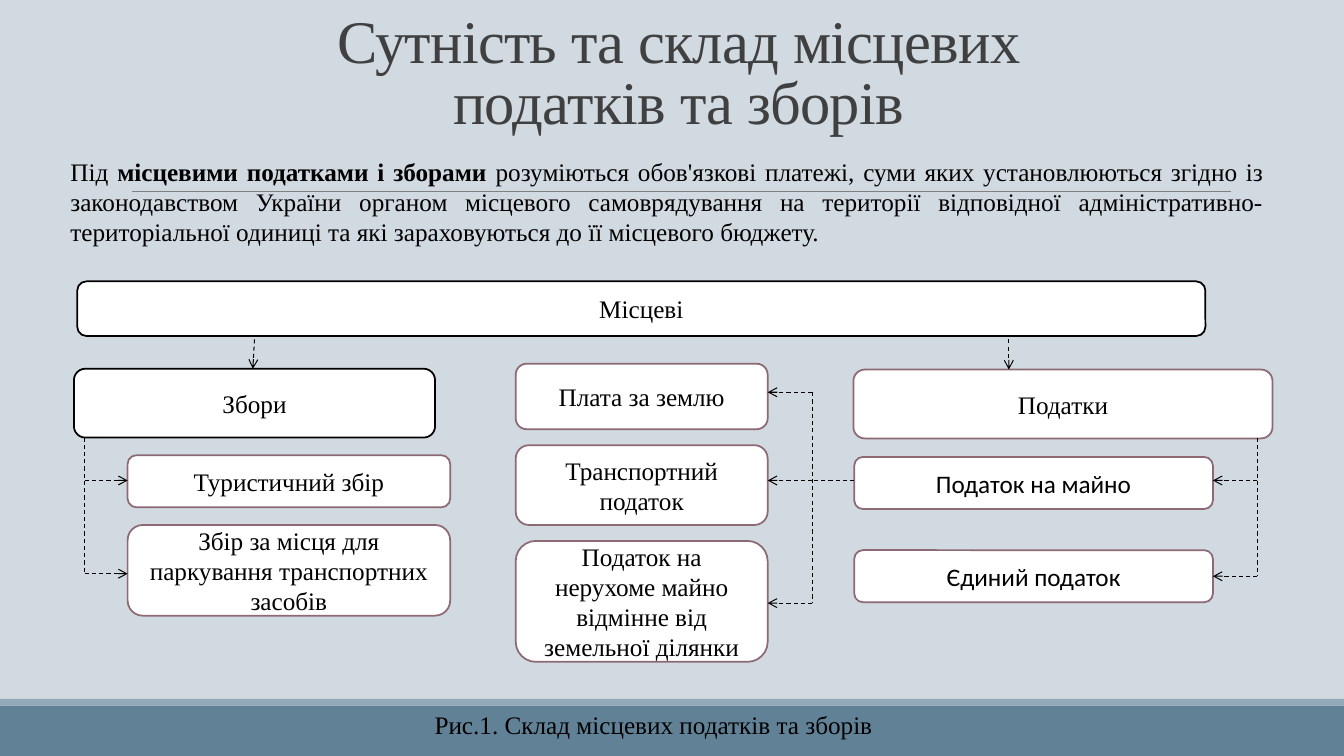
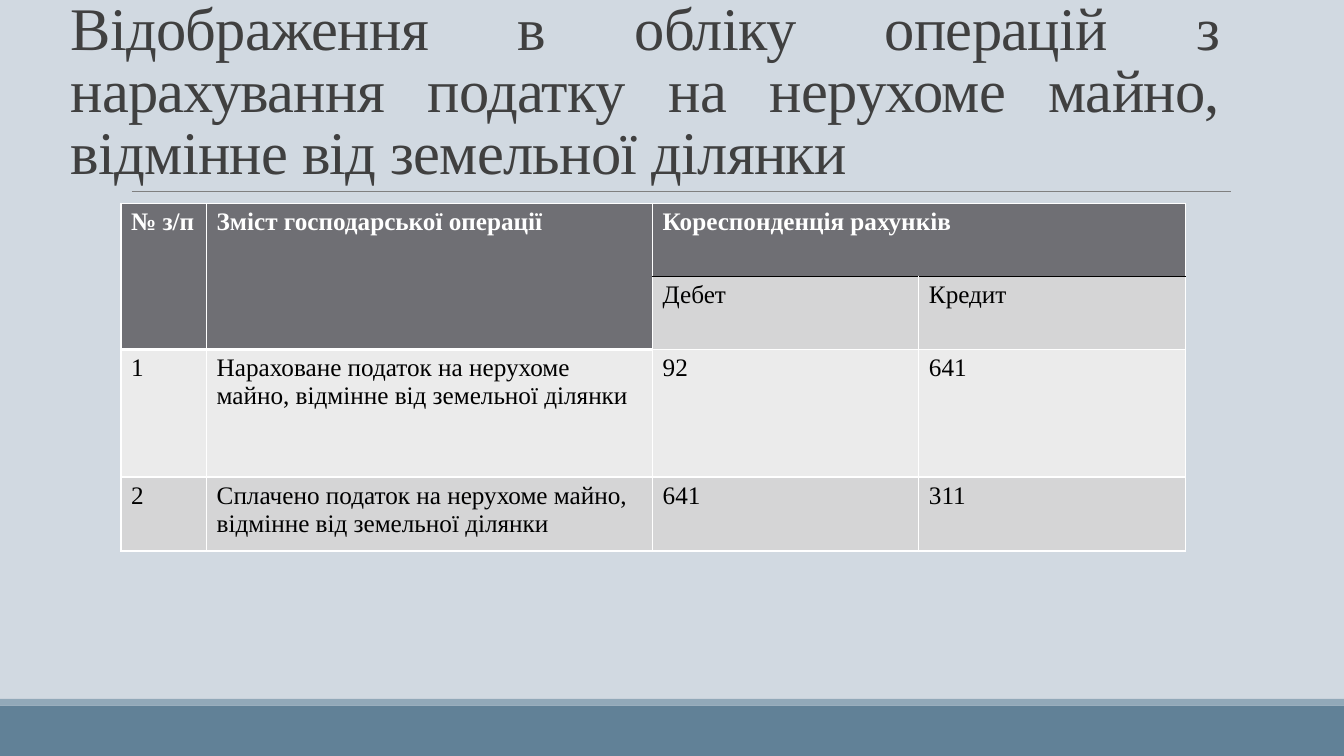
from lxml.etree import SubElement
from pptx import Presentation
from pptx.dml.color import RGBColor
from pptx.enum.dml import MSO_LINE
from pptx.enum.shapes import MSO_CONNECTOR, MSO_SHAPE
from pptx.enum.text import MSO_ANCHOR, MSO_AUTO_SIZE, PP_ALIGN
from pptx.oxml.ns import qn
from pptx.util import Inches, Pt

COLORS = {
    "background": "D1D9E1", "band": "618197", "stripe": "92A9B9",
    "rule": "808080", "title": "404040", "text": "000000",
    "white": "FFFFFF", "accent": "8D6974", "header": "6F6F74",
    "odd": "D5D5D6", "even": "EBEBEB",
}
SERIF, SANS = "Times New Roman", "Calibri"
COLUMNS, ROWS = 160, 90  # square cells, twelve to the inch
TITLE_ONLY = 5


def grid(cells):
    return Inches(cells / 12)


def color(key):
    return RGBColor.from_string(COLORS[key])


def apply(target, values):
    for name, value in values.items():
        setattr(target, name, value)


class Deck:
    """Holds the presentation, its style and the current slide."""

    def __init__(self):
        self.presentation = Presentation()
        apply(self.presentation, {"slide_width": grid(COLUMNS), "slide_height": grid(ROWS)})
        backdrop = self.presentation.slide_master.background.fill
        backdrop.solid()
        backdrop.fore_color.rgb = color("background")
        self.slide = None

    def new_slide(self, title, area, align, anchor):
        layout = self.presentation.slide_layouts[TITLE_ONLY]
        self.slide = self.presentation.slides.add_slide(layout)
        self.shape(MSO_SHAPE.RECTANGLE, (0, 84, COLUMNS, 6), "band")
        self.shape(MSO_SHAPE.RECTANGLE, (0, 83.2, COLUMNS, 0.8), "stripe")
        self.line((15.7, 22.8), (146.5, 22.8), "rule", 0.5)
        heading = self.slide.shapes.title
        self.place(heading, area)
        self.set_text(heading.text_frame, title, align, anchor, ink="title", size=43.2)
        paragraph = heading.text_frame.paragraphs[0]
        paragraph.line_spacing = 0.85
        for run in paragraph.runs:
            run._r.get_or_add_rPr().set("spc", "-50")

    def place(self, target, area):
        apply(target, dict(zip(("left", "top", "width", "height"), map(grid, area))))

    def set_text(self, frame, text, align, anchor=MSO_ANCHOR.TOP, ink="text",
                 size=18, face=SERIF, bold=False):
        """Fill a frame with a string or with (string, bold) pieces."""
        apply(frame, {"word_wrap": True, "auto_size": MSO_AUTO_SIZE.NONE,
                      "vertical_anchor": anchor})
        paragraph = frame.paragraphs[0]
        paragraph.alignment = align
        pieces = [(text, bold)] if isinstance(text, str) else text
        for piece, weight in pieces:
            for index, words in enumerate(piece.split("\n")):
                if index:
                    paragraph.add_line_break()
                run = paragraph.add_run()
                run.text = words
                apply(run.font, {"name": face, "size": Pt(size), "bold": weight})
                run.font.color.rgb = color(ink)

    def shape(self, preset, area, fill, outline=None):
        shape = self.slide.shapes.add_shape(preset, *map(grid, area))
        shape.shadow.inherit = False
        shape.fill.solid()
        shape.fill.fore_color.rgb = color(fill)
        if outline:
            shape.line.color.rgb = color(outline)
            shape.line.width = Pt(1.25)
        else:
            shape.line.fill.background()
        return shape

    def box(self, text, area, outline="accent", face=SERIF):
        box = self.shape(MSO_SHAPE.ROUNDED_RECTANGLE, area, "white", outline)
        self.set_text(box.text_frame, text, PP_ALIGN.CENTER, MSO_ANCHOR.MIDDLE, face=face)

    def text(self, text, area, align):
        frame = self.slide.shapes.add_textbox(*map(grid, area)).text_frame
        self.set_text(frame, text, align)

    def line(self, start, end, ink="text", width=0.75):
        line = self.slide.shapes.add_connector(
            MSO_CONNECTOR.STRAIGHT, *map(grid, start + end))
        line.line.color.rgb = color(ink)
        line.line.width = Pt(width)
        SubElement(line._element.spPr, qn("a:effectLst"))
        return line

    def dashed(self, start, end, arrow=True):
        link = self.line(start, end)
        link.line.dash_style = MSO_LINE.DASH
        if arrow:
            SubElement(link.line._get_or_add_ln(), qn("a:tailEnd"), type="arrow")

    def branches(self, trunk, top, tip, stops):
        """Draw a vertical trunk with an arrow to the tip at each stop."""
        self.dashed((trunk, top), (trunk, stops[-1]), arrow=False)
        for stop in stops:
            self.dashed((trunk, stop), (tip, stop))

    def border(self, cell, side, ink, width):
        edge = SubElement(cell._tc.get_or_add_tcPr(), qn(f"a:ln{side}"), w=str(Pt(width)))
        fill = SubElement(edge, qn("a:solidFill"))
        SubElement(fill, qn("a:srgbClr"), val=COLORS[ink])

    def cell(self, cell, text, fill, edges, ink, bold):
        for side in "LRTB":
            self.border(cell, side, *edges.get(side, ("white", 1)))
        cell.fill.solid()
        cell.fill.fore_color.rgb = color(fill)
        if text:
            self.set_text(cell.text_frame, text, PP_ALIGN.LEFT, ink=ink, bold=bold)

    def table(self, entries, left, top, widths, heights):
        """Draw a table whose two heading rows share their first two columns."""
        table = self.slide.shapes.add_table(
            len(heights), len(widths),
            *map(grid, (left, top, sum(widths), sum(heights)))).table
        for column, width in zip(table.columns, widths):
            column.width = grid(width)
        for row, height in zip(table.rows, heights):
            row.height = grid(height)
        for column in range(2):
            table.cell(0, column).merge(table.cell(1, column))
        table.cell(0, 2).merge(table.cell(0, 3))
        for r, row in enumerate(entries):
            for c, text in enumerate(row):
                heading = r == 0 or (r == 1 and c < 2)
                edges = {}
                if c < 2 and r < 3:
                    edges["T" if r == 2 else "B"] = ("white", 3)
                elif c >= 2 and r < 2:
                    edges["T" if r else "B"] = ("text", 1)
                fill = "header" if heading else ("odd" if r % 2 else "even")
                self.cell(table.cell(r, c), text, fill, edges,
                          "white" if heading else "text", heading)


def add_structure(deck):
    deck.new_slide("Сутність та склад місцевих\nподатків та зборів",
                   (4.3, 2.6, 153, 12.8), PP_ALIGN.CENTER, MSO_ANCHOR.MIDDLE)
    deck.text([
        ("Під ", False),
        ("місцевими податками і зборами ", True),
        ("розуміються обов'язкові платежі, суми яких установлюються згідно із "
         "законодавством України органом місцевого самоврядування на території "
         "відповідної адміністративно-територіальної одиниці та які зараховуються "
         "до її місцевого бюджету.", False),
    ], (7.2, 18, 144.4, 12.1), PP_ALIGN.JUSTIFY)

    deck.box("Місцеві", (9.2, 33.5, 134.3, 6.5), "text")
    deck.box("Збори", (8.8, 43.9, 43, 8.2), "text")
    deck.box("Податки", (101.6, 44, 49.9, 8.2))
    deck.dashed((30.3, 40.4), (30.1, 43.9))
    deck.dashed((120.1, 40.4), (120.1, 44))

    fees = [("Туристичний збір", 54.2, 6.2),
            ("Збір за місця для паркування транспортних засобів", 62.5, 10.8)]
    property_taxes = [("Плата за землю", 43.3, 7.8),
                      ("Транспортний податок", 53, 9.5),
                      ("Податок на нерухоме майно відмінне від земельної ділянки", 64.4, 14.4)]
    taxes = [("Податок на майно", 54.4, 6.2), ("Єдиний податок", 65.5, 6.2)]
    for group, left, width, face in ((fees, 15.2, 38.4, SERIF),
                                     (property_taxes, 61.4, 30, SERIF),
                                     (taxes, 101.7, 42.7, SANS)):
        for name, top, height in group:
            deck.box(name, (left, top, width, height), face=face)

    deck.branches(10.1, 52.1, 15.2, (57.2, 68.3))
    deck.branches(149.7, 52.1, 144.4, (57.2, 68.6))
    deck.branches(96.7, 46.7, 91.4, (46.7, 57.2, 71.8))
    deck.dashed((101.7, 57.2), (96.7, 57.2), arrow=False)
    deck.text("Рис.1. Склад місцевих податків та зборів",
              (20.6, 83.9, 114.4, 4.8), PP_ALIGN.CENTER)


def add_accounting(deck):
    deck.new_slide("Відображення в обліку операцій з нарахування податку на "
                   "нерухоме майно, відмінне від земельної ділянки",
                   (7.2, 3.7, 139.2, 19.1), PP_ALIGN.JUSTIFY, MSO_ANCHOR.BOTTOM)
    deck.table([
        ("№ з/п", "Зміст господарської операції", "Кореспонденція рахунків", ""),
        ("", "", "Дебет", "Кредит"),
        ("1", "Нараховане податок на нерухоме майно, відмінне від земельної ділянки",
         "92", "641"),
        ("2", "Сплачено податок на нерухоме майно, відмінне від земельної ділянки",
         "641", "311"),
    ], 14.4, 24.2, (10.2, 53.1, 31.7, 31.7), (8.7, 8.7, 15.2, 8.8))


def main():
    deck = Deck()
    add_structure(deck)
    add_accounting(deck)
    deck.presentation.save("out.pptx")


if __name__ == "__main__":
    main()
